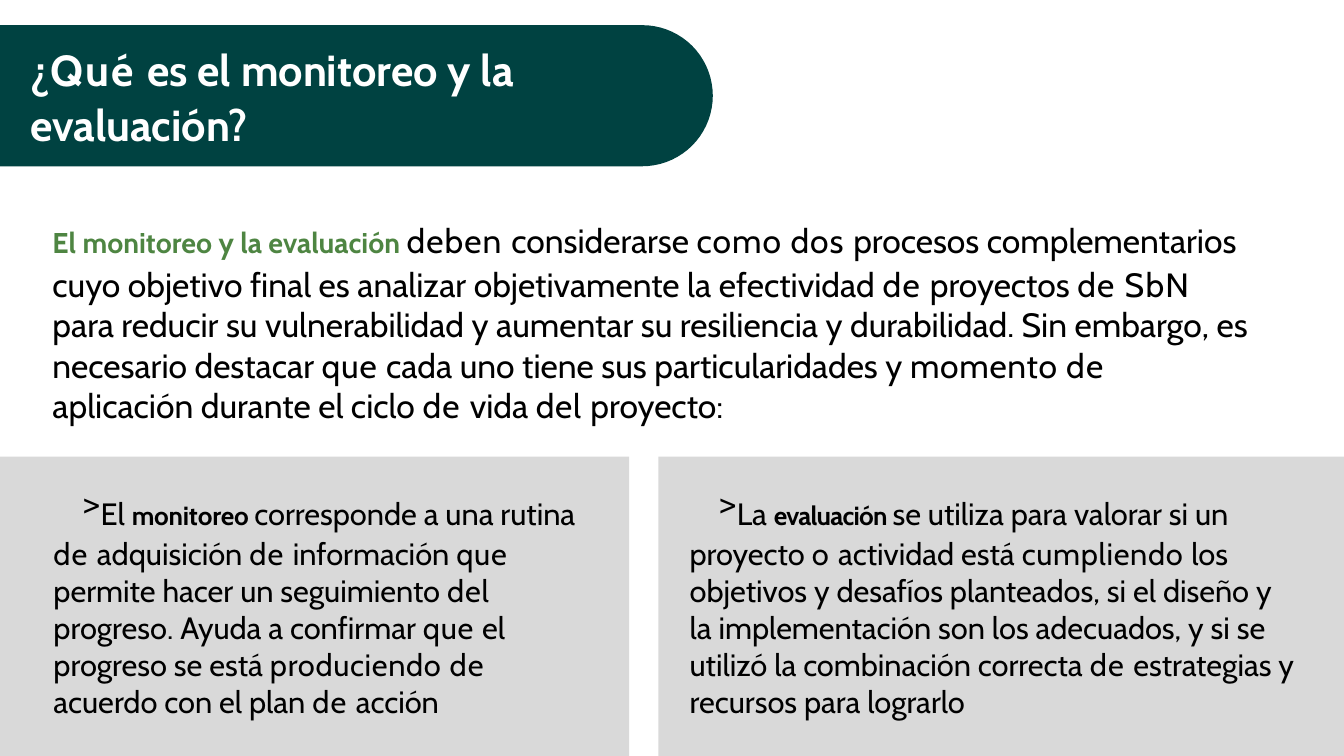
import itertools
import math

import lxml.etree
import pptx
import pptx.dml.color
import pptx.enum.shapes
import pptx.oxml.ns
import pptx.util

Inches = pptx.util.Inches
Pt = pptx.util.Pt
RGBColor = pptx.dml.color.RGBColor

DARK_GREEN = RGBColor(0x00, 0x42, 0x41)
LEAF_GREEN = RGBColor(0x4E, 0x85, 0x42)
PANEL_GRAY = RGBColor(0xD9, 0xD9, 0xD9)
WHITE = RGBColor(0xFF, 0xFF, 0xFF)
BLACK = RGBColor(0x00, 0x00, 0x00)

# Letter spacing in points for the words that are set wider
TRACKING = {"¿Qué": 1.4, "deben": 0.8, "como": 0.7, "dos": 0.7, "de": 0.9,
            "SbN": 1.2, "que": 0.6, "del": 0.6, "momento": 0.5,
            "produciendo": 0.5, "o": 0.9, "cumpliendo": 0.5}


def fill_plain(shape, color):
    shape.shadow.inherit = False
    shape.fill.solid()
    shape.fill.fore_color.rgb = color
    shape.line.fill.background()


def add_paragraph_box(box, size, color, body, lead="", lead_size=None,
                      lead_color=BLACK, lead_tracking=0, opening=""):
    """Add a text box: opening words, a bold raised lead, then the body."""
    text_box = slide.shapes.add_textbox(*[Inches(value) for value in box])
    frame = text_box.text_frame
    frame.word_wrap = True
    frame.margin_left = frame.margin_right = frame.margin_bottom = 0
    frame.margin_top = Inches(0.01)
    paragraph = frame.paragraphs[0]
    paragraph.font.name = "Cabin"
    paragraph.space_before = Pt(1)
    for part, is_lead in ((opening, False), (lead, True), (body, False)):
        groups = itertools.groupby(part.split(), lambda word: TRACKING.get(word, 0))
        for tracking, words in groups:
            run = paragraph.add_run()
            run.text = " ".join(words) + " "
            run.font.name = "Cabin"
            run.font.size = Pt(lead_size if is_lead else size)
            run.font.color.rgb = lead_color if is_lead else color
            properties = run.font._element
            if is_lead:
                run.font.bold = True
                properties.set("baseline", "1000")
                tracking = lead_tracking
            if tracking:
                properties.set("spc", str(round(tracking * 100)))
    paragraph.runs[-1].text = paragraph.runs[-1].text.rstrip()
    return paragraph


presentation = pptx.Presentation()
presentation.slide_width = Inches(13.33)
presentation.slide_height = Inches(7.5)
slide = presentation.slides.add_slide(presentation.slide_layouts[6])

# Gray panels
for left, width in ((6.53, 6.8), (0, 6.24)):
    panel = slide.shapes.add_shape(
        pptx.enum.shapes.MSO_SHAPE.RECTANGLE,
        Inches(left), Inches(4.53), Inches(width), Inches(2.97))
    fill_plain(panel, PANEL_GRAY)

# Title banner, with a half circle at its right end
banner_radius, center_x, center_y = 0.7, 6.37, 0.95
banner_points = [(0, center_y + banner_radius)]
for angle in range(90, -91, -5):
    banner_points.append((center_x + banner_radius * math.cos(math.radians(angle)),
                          center_y + banner_radius * math.sin(math.radians(angle))))
builder = slide.shapes.build_freeform(0, Inches(center_y - banner_radius))
builder.add_line_segments([(Inches(x), Inches(y)) for x, y in banner_points])
fill_plain(builder.convert_to_shape(), DARK_GREEN)

title = add_paragraph_box((0.3, 0.39, 5.16, 1.09), 31, WHITE,
                          "¿Qué es el monitoreo y la evaluación?")
title.font.bold = True
for run in title.runs:
    run.font.bold = True
title.line_spacing = Pt(39.1)

add_paragraph_box(
    (0.52, 2.02, 11.91, 2.02), 24, BLACK,
    "deben considerarse como dos procesos complementarios cuyo objetivo final es "
    "analizar objetivamente la efectividad de proyectos de SbN para reducir su "
    "vulnerabilidad y aumentar su resiliencia y durabilidad. Sin embargo, es "
    "necesario destacar que cada uno tiene sus particularidades y momento de "
    "aplicación durante el ciclo de vida del proyecto:",
    lead="El monitoreo y la evaluación", lead_size=35.2, lead_color=LEAF_GREEN)

# Definitions on the panels
definitions = [
    (0.52, 5.25, "El", "monitoreo", -0.1,
     "corresponde a una rutina de adquisición de información que permite hacer un "
     "seguimiento del progreso. Ayuda a confirmar que el progreso se está "
     "produciendo de acuerdo con el plan de acción"),
    (6.83, 6.01, "La", "evaluación", -0.5,
     "se utiliza para valorar si un proyecto o actividad está cumpliendo los "
     "objetivos y desafíos planteados, si el diseño y la implementación son los "
     "adecuados, y si se utilizó la combinación correcta de estrategias y recursos "
     "para lograrlo"),
]
for left, width, article, term, tracking, meaning in definitions:
    paragraph = add_paragraph_box(
        (left, 4.76, width, 2.23), 22, BLACK, meaning, opening=article,
        lead=term, lead_size=32.2, lead_tracking=tracking)
    properties = paragraph._p.get_or_add_pPr()
    properties.set("marL", str(Inches(0.01)))
    properties.set("indent", str(Inches(0.29)))
    bullet = lxml.etree.Element(pptx.oxml.ns.qn("a:buChar"), char=">")
    tabs = lxml.etree.Element(pptx.oxml.ns.qn("a:tabLst"))
    lxml.etree.SubElement(tabs, pptx.oxml.ns.qn("a:tab"),
                          pos=str(Inches(0.3)), algn="l")
    defaults = properties.find(pptx.oxml.ns.qn("a:defRPr"))
    defaults.addprevious(bullet)
    defaults.addprevious(tabs)

presentation.save("out.pptx")
